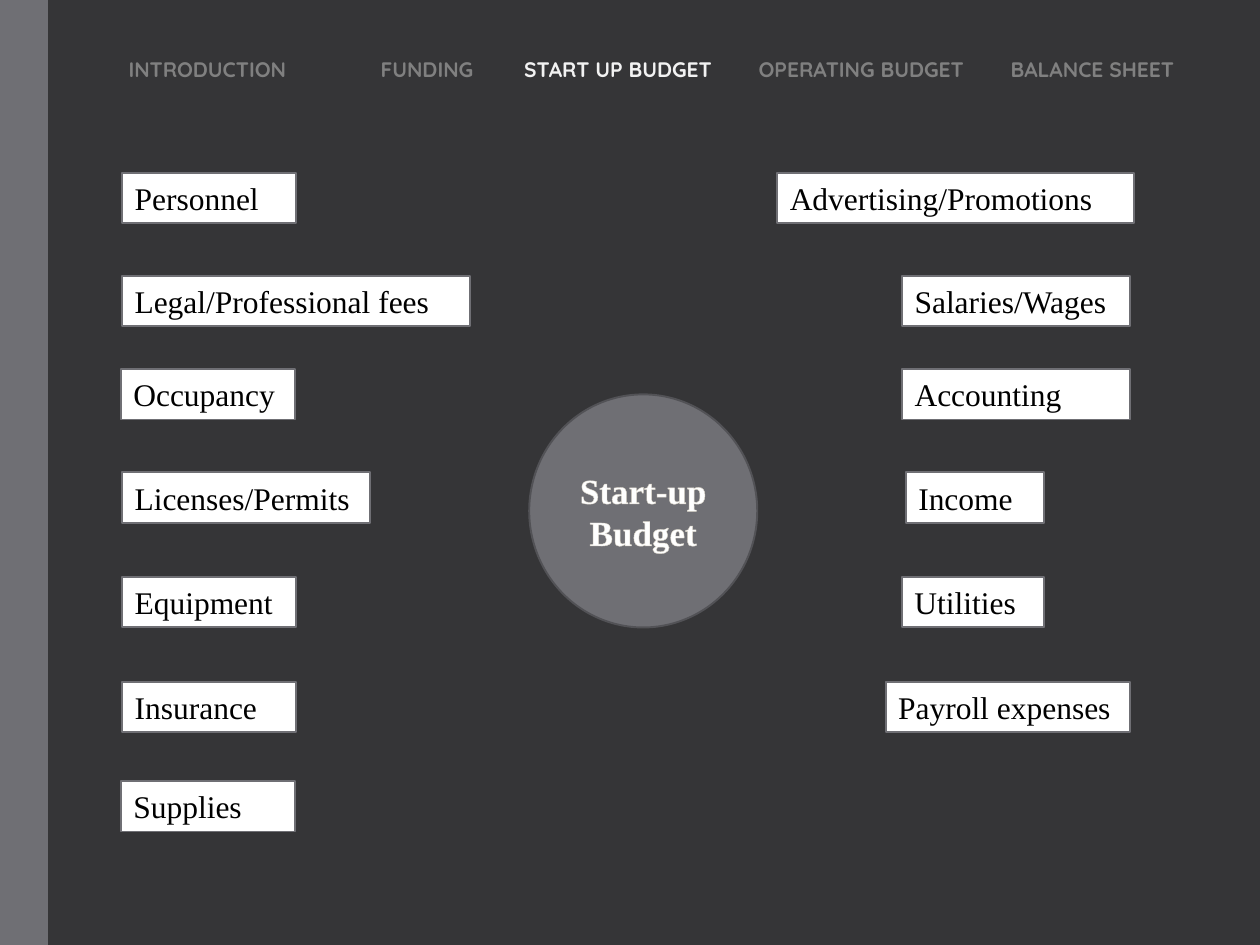
from dataclasses import dataclass

from lxml import etree
from pptx import Presentation
from pptx.dml.color import RGBColor
from pptx.enum.shapes import MSO_SHAPE
from pptx.enum.text import MSO_ANCHOR, MSO_AUTO_SIZE, PP_ALIGN
from pptx.oxml.ns import qn
from pptx.util import Inches, Pt

RECT, OVAL = MSO_SHAPE.RECTANGLE, MSO_SHAPE.OVAL
LEFT, CENTER = PP_ALIGN.LEFT, PP_ALIGN.CENTER
TOP, MIDDLE = MSO_ANCHOR.TOP, MSO_ANCHOR.MIDDLE
GROW = MSO_AUTO_SIZE.SHAPE_TO_FIT_TEXT

DARK = RGBColor(0x35, 0x35, 0x37)
GRAY = RGBColor(0x6F, 0x6F, 0x74)
EDGE = RGBColor(0x52, 0x52, 0x56)
DIM = RGBColor(0x80, 0x80, 0x80)
LIT = RGBColor(0xF2, 0xF2, 0xF2)
WHITE = RGBColor(0xFF, 0xFF, 0xFF)
BLACK = RGBColor(0, 0, 0)
CREAM = RGBColor(0xD9, 0xD4, 0xC9)

WIDE, HIGH = 10, 7.5
SERIF, SANS = "Times New Roman", "Quicksand"
ROWS = (1.37, 2.19, 2.93, 3.75, 4.58, 5.41, 6.2)
BOX_H = 0.4
TABS = (2, 3.14, 5, 7)
MENU = ("INTRODUCTION", "FUNDING", "START UP BUDGET", "OPERATING BUDGET", "BALANCE SHEET")
ACTIVE = "START UP BUDGET"


@dataclass
class Item:
    text: str
    row: int
    left: float = 0.97
    width: float = 1.38


ITEMS = (
    Item("Personnel", 0),
    Item("Legal/Professional fees", 1, width=2.76),
    Item("Occupancy", 2, left=0.96),
    Item("Licenses/Permits", 3, width=1.97),
    Item("Equipment", 4),
    Item("Insurance", 5),
    Item("Supplies", 6, left=0.96),
    Item("Advertising/Promotions", 0, 6.17, 2.83),
    Item("Salaries/Wages", 1, 7.16, 1.81),
    Item("Accounting", 2, 7.16, 1.81),
    Item("Income", 3, 7.19, 1.1),
    Item("Utilities", 4, 7.16, 1.13),
    Item("Payroll expenses", 5, 7.03, 1.94),
)


def write(para, text: str, *, size: float, font: str, color: RGBColor, bold=False, align=LEFT):
    para.alignment = align
    run = para.add_run()
    run.text = text
    run.font.size = Pt(size)
    run.font.name = font
    run.font.bold = bold
    run.font.color.rgb = color
    return run


def shape(slide, kind, left: float, top: float, width: float, height: float, fill, line=None):
    part = slide.shapes.add_shape(kind, Inches(left), Inches(top), Inches(width), Inches(height))
    part.shadow.inherit = False
    part.fill.solid()
    part.fill.fore_color.rgb = fill
    if line is None:
        part.line.fill.background()
    else:
        part.line.color.rgb = line
        part.line.width = Pt(1.1)
    return part


def outline(run, color: RGBColor) -> None:
    line = etree.Element(qn("a:ln"), w=str(Pt(1)))
    fill = etree.SubElement(line, qn("a:solidFill"))
    etree.SubElement(fill, qn("a:srgbClr"), val=str(color))
    run.font._element.insert(0, line)


def menu(slide) -> None:
    box = slide.shapes.add_textbox(Inches(0.35), 0, Inches(9.65), Inches(0.71))
    frame = box.text_frame
    frame.word_wrap = True
    frame.auto_size = GROW
    frame.margin_left = Inches(0.67)
    frame.margin_right = 0
    para = frame.paragraphs[0]
    para.line_spacing = 3.0
    stops = etree.SubElement(para._p.get_or_add_pPr(), qn("a:tabLst"))
    for stop in TABS:
        etree.SubElement(stops, qn("a:tab"), pos=str(Inches(stop)), algn="l")
    for col, name in enumerate(MENU):
        color = LIT if name == ACTIVE else DIM
        text = "\t" + name if col else name
        write(para, text, size=12, font=SANS, color=color, bold=True)


def center(slide) -> None:
    disc = shape(slide, OVAL, 4.2, 3.13, 1.81, 1.85, GRAY, EDGE)
    frame = disc.text_frame
    frame.word_wrap = True
    frame.vertical_anchor = MIDDLE
    run = write(frame.paragraphs[0], "Start-up Budget", size=20, font=SERIF,
                color=WHITE, bold=True, align=CENTER)
    outline(run, CREAM)


def label(slide, item: Item) -> None:
    box = shape(slide, RECT, item.left, ROWS[item.row], item.width, BOX_H, WHITE, GRAY)
    frame = box.text_frame
    frame.word_wrap = True
    frame.auto_size = GROW
    frame.vertical_anchor = TOP
    write(frame.paragraphs[0], item.text, size=18, font=SERIF, color=BLACK)


def main() -> None:
    deck = Presentation()
    deck.slide_width, deck.slide_height = Inches(WIDE), Inches(HIGH)
    slide = deck.slides.add_slide(deck.slide_layouts[6])
    back = slide.background.fill
    back.solid()
    back.fore_color.rgb = DARK
    shape(slide, RECT, 0, 0, 0.38, HIGH, GRAY)
    menu(slide)
    center(slide)
    for item in ITEMS:
        label(slide, item)
    deck.save("out.pptx")


if __name__ == "__main__":
    main()
